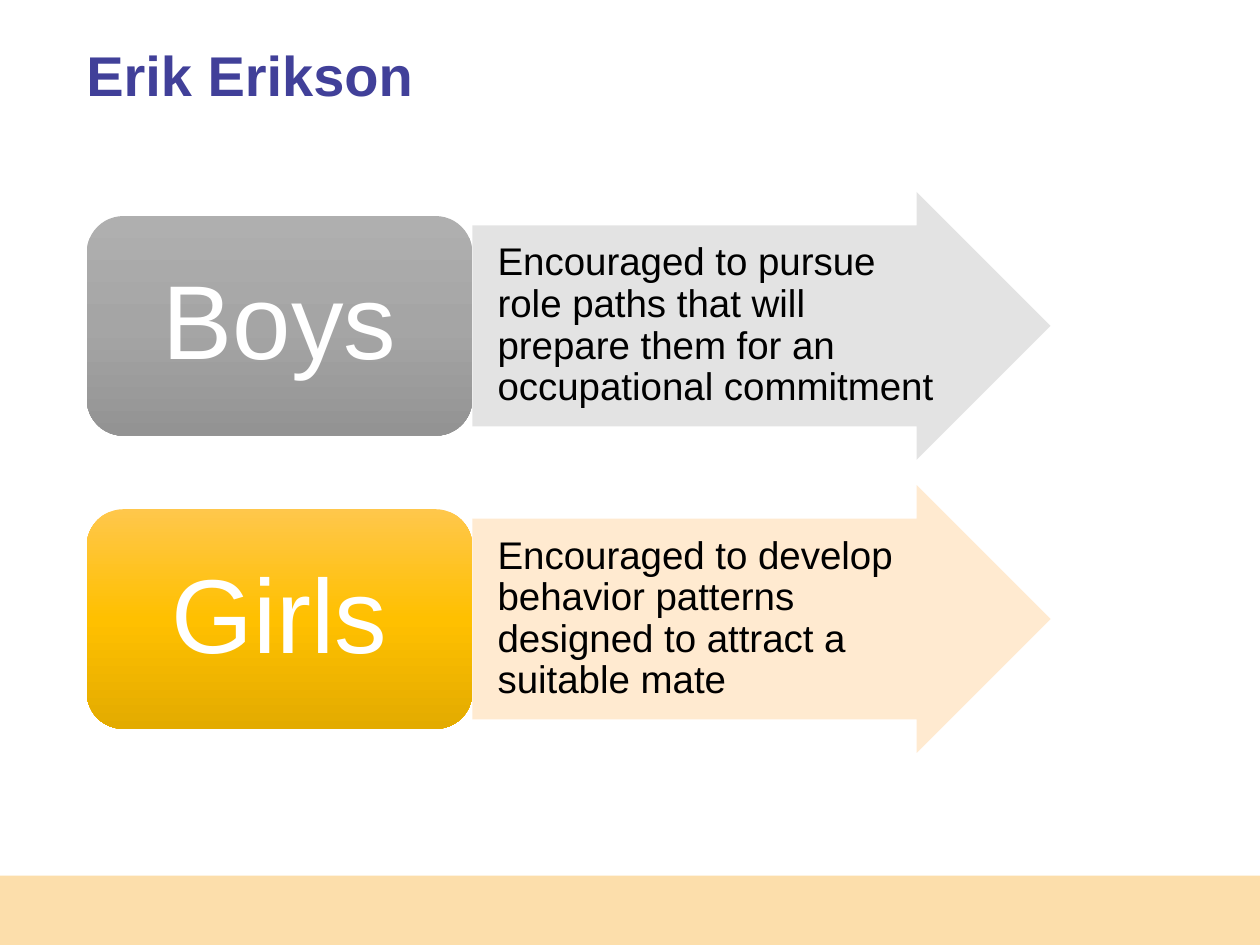
from copy import deepcopy

from lxml.etree import SubElement
from pptx import Presentation
from pptx.dml.color import RGBColor
from pptx.enum.shapes import MSO_SHAPE
from pptx.enum.text import MSO_ANCHOR, MSO_AUTO_SIZE, PP_ALIGN
from pptx.oxml.ns import qn
from pptx.util import Cm, Pt

COLORS = {
    "title": "414099",
    "footer": "FCDEAB",
    "white": "FFFFFF",
    "black": "000000",
    "gray_arrow": "E1E1E1",
    "gold_arrow": "FFE8CB",
}
GRADIENTS = {
    "gray": ("AFAFAF", "A5A5A5", "939393"),
    "gold": ("FFC74B", "FFC000", "E3AB00"),
}
ROWS = [
    ("Boys", "Encouraged to pursue role paths that will prepare "
     "them for an occupational commitment", "gray"),
    ("Girls", "Encouraged to develop behavior patterns designed to "
     "attract a suitable mate", "gold"),
]


def rgb(name):
    return RGBColor.from_string(COLORS[name])


def write(s, text, size, color, align, margins, bold=False):
    tf = s.text_frame
    left, top, right, bottom = (Cm(m) for m in margins)
    frame = {
        "margin_left": left, "margin_top": top,
        "margin_right": right, "margin_bottom": bottom,
        "word_wrap": True, "auto_size": MSO_AUTO_SIZE.NONE,
        "vertical_anchor": MSO_ANCHOR.MIDDLE,
    }
    for key, value in frame.items():
        setattr(tf, key, value)
    p = tf.paragraphs[0]
    p.alignment, p.line_spacing = align, 0.9
    r = p.add_run()
    r.text = text
    for key, value in {"name": "Arial", "size": Pt(size), "bold": bold}.items():
        setattr(r.font, key, value)
    r.font.color.rgb = rgb(color)


def add_box(slide, kind, x, y, w, h):
    s = slide.shapes.add_shape(kind, Cm(x), Cm(y), Cm(w), Cm(h))
    s.shadow.inherit = False
    s.line.fill.background()
    return s


def fill_gradient(s, hexes):
    s.fill.gradient()
    s.fill.gradient_angle = 270
    first = s.fill._fill._gradFill.find(qn("a:gsLst"))[0]
    first.addnext(deepcopy(first))
    for stop, position, value in zip(s.fill.gradient_stops, (0, 0.5, 1), hexes):
        stop.position = position
        stop.color.rgb = RGBColor.from_string(value)


def fill_translucent(s, color):
    s.fill.solid()
    s.fill.fore_color.rgb = rgb(color)
    clr = s._element.spPr.find(qn("a:solidFill"))[0]
    SubElement(clr, qn("a:alpha")).set("val", "90000")


def add_footer(slide, x, y, w, h):
    s = add_box(slide, MSO_SHAPE.RECTANGLE, x, y, w, h)
    s.fill.solid()
    s.fill.fore_color.rgb = rgb("footer")


def add_title(slide, x, y, w, h):
    s = slide.shapes.title
    s.left, s.top, s.width, s.height = Cm(x), Cm(y), Cm(w), Cm(h)
    write(s, "Erik Erikson", 32, "title", PP_ALIGN.LEFT, (0, 0, 0, 0), True)


def add_row(slide, x, y, w, h, label, text, theme):
    label_w, label_h = 0.4 * w, 0.82 * h
    arrow = add_box(slide, MSO_SHAPE.RIGHT_ARROW, x + label_w, y, w - label_w, h)
    arrow.adjustments[0], arrow.adjustments[1] = 0.75, 0.5
    fill_translucent(arrow, f"{theme}_arrow")
    write(arrow, text, 22, "black", PP_ALIGN.LEFT, (0.51, 0.04, 0.04, 0.04))

    s = add_box(slide, MSO_SHAPE.ROUNDED_RECTANGLE,
                x, y + (h - label_h) / 2, label_w, label_h)
    fill_gradient(s, GRADIENTS[theme])
    write(s, label, 60, "white", PP_ALIGN.CENTER, (0.63, 0.32, 0.63, 0.32))


def main():
    prs = Presentation()
    prs.slide_width, prs.slide_height = Cm(25.4), Cm(19.05)
    slide = prs.slides.add_slide(prs.slide_layouts[5])
    add_footer(slide, 0, 17.65, 25.4, 1.4)
    add_title(slide, 1.74, 0, 21.9, 3.16)
    for i, row in enumerate(ROWS):
        add_row(slide, 1.75, 3.87 + i * 5.91, 19.43, 5.4, *row)
    prs.save("out.pptx")


if __name__ == "__main__":
    main()
